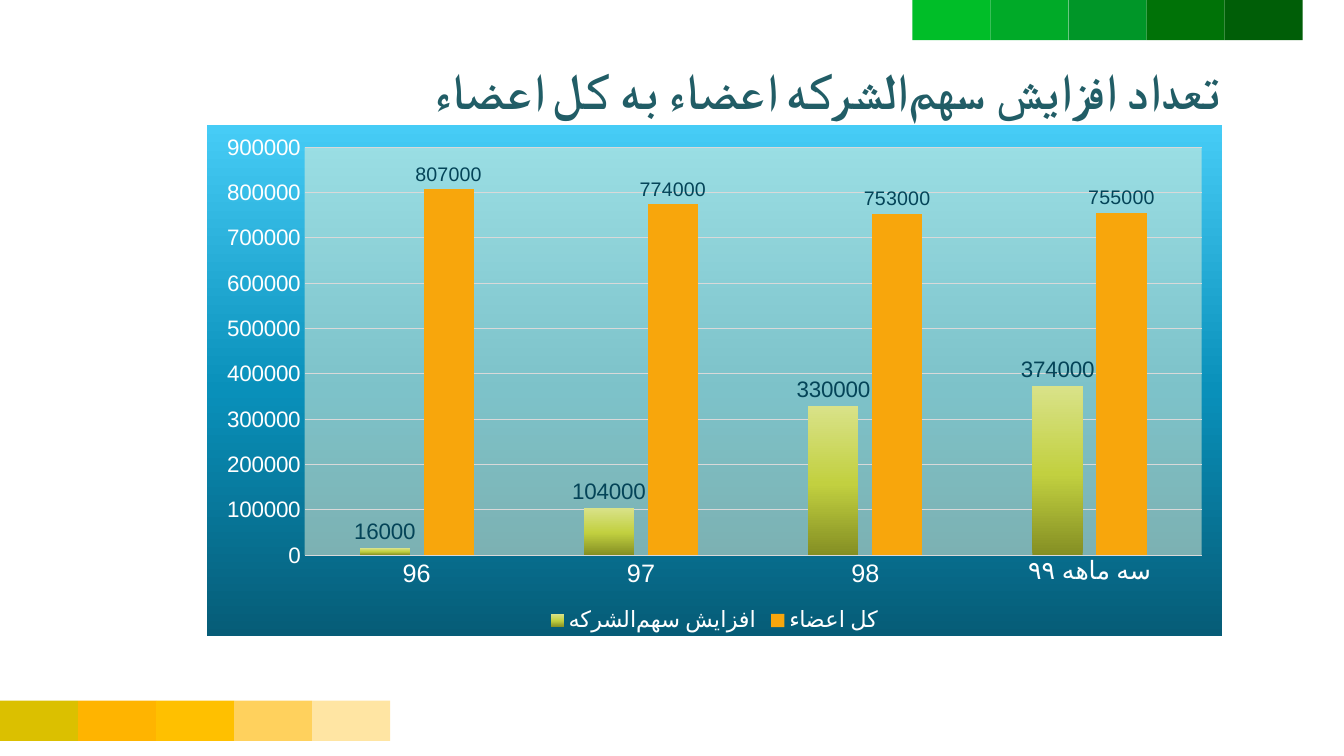
from dataclasses import dataclass

from lxml.etree import SubElement
from pptx import Presentation
from pptx.chart.data import CategoryChartData
from pptx.dml.color import RGBColor
from pptx.enum.chart import (XL_CHART_TYPE, XL_LABEL_POSITION,
                             XL_LEGEND_POSITION, XL_TICK_MARK)
from pptx.enum.shapes import MSO_SHAPE
from pptx.enum.text import MSO_AUTO_SIZE, PP_ALIGN
from pptx.oxml import parse_xml
from pptx.oxml.ns import nsdecls, qn
from pptx.util import Inches, Pt

HALF_SPACE = chr(0x200C)  # Persian zero-width non-joiner
SHARE_CAPITAL = f"سهم{HALF_SPACE}الشرکه"


@dataclass(frozen=True)
class Theme:
    greens: tuple = ("00BE28", "00AA28", "009628", "007207", "005E07")
    yellows: tuple = ("DBC000", "FFB400", "FFC000", "FFD15D", "FFE5A3")
    title: str = "215D66"
    light: str = "FFFFFF"
    grid: str = "D9D9D9"
    label: str = "044458"
    backdrop: tuple = ((0, "065C77"), (48, "0990BA"), (100, "46CCF6"))
    plot: str = "F2F5D8"
    increase: tuple = ((0, "848F23"), (48, "C2D040"), (100, "D9E289"))
    members: str = "F8A60C"
    body_font: str = "Calibri"
    number_font: str = "Arial"
    title_size: int = 36
    category_size: int = 18
    chart_size: int = 16
    members_size: int = 14
    base_size: int = 10


THEME = Theme()


def style_font(font, size, color, name, bold=False):
    font.size = Pt(size)
    font.name = name
    font.bold = bold
    font.color.rgb = RGBColor.from_string(color)


def gradient_xml(stops):
    """Return a gradient that runs from the bottom to the top."""
    marks = "".join(f'<a:gs pos="{pos * 1000}"><a:srgbClr val="{color}"/></a:gs>'
                    for pos, color in stops)
    return (f'<a:gradFill rotWithShape="1"><a:gsLst>{marks}</a:gsLst>'
            '<a:lin ang="16200000" scaled="0"/></a:gradFill>')


def chart_part_format(fill_xml):
    return parse_xml(f'<c:spPr {nsdecls("c", "a")}>{fill_xml}'
                     '<a:ln><a:noFill/></a:ln></c:spPr>')


def add_rtl_text(slide, text, box, **font_format):
    frame = slide.shapes.add_textbox(*map(Inches, box)).text_frame
    frame.word_wrap = True
    frame.auto_size = MSO_AUTO_SIZE.SHAPE_TO_FIT_TEXT
    paragraph = frame.paragraphs[0]
    paragraph.alignment = PP_ALIGN.RIGHT
    paragraph._p.get_or_add_pPr().set("rtl", "1")
    run = paragraph.add_run()
    run.text = text
    style_font(run.font, **font_format)
    SubElement(run._r.get_or_add_rPr(), qn("a:cs"), typeface=font_format["name"])


def add_color_strip(slide, colors, box):
    left, top, width, height = box
    step = width / len(colors)
    for index, color in enumerate(colors):
        tile = slide.shapes.add_shape(
            MSO_SHAPE.RECTANGLE, Inches(left + index * step), Inches(top),
            Inches(step), Inches(height))
        tile.shadow.inherit = False
        tile.fill.solid()
        tile.fill.fore_color.rgb = RGBColor.from_string(color)
        tile.line.fill.background()


def style_axes(chart):
    years, counts = chart.category_axis, chart.value_axis
    for axis, size in ((years, THEME.category_size), (counts, THEME.chart_size)):
        axis.major_tick_mark = axis.minor_tick_mark = XL_TICK_MARK.NONE
        style_font(axis.tick_labels.font, size, THEME.light, THEME.number_font)
    counts.minimum_scale = 0
    counts.maximum_scale = 900000
    counts.major_unit = 100000
    counts.has_major_gridlines = True
    counts.format.line.fill.background()
    for line in (years.format.line, counts.major_gridlines.format.line):
        line.width = Pt(0.75)
        line.color.rgb = RGBColor.from_string(THEME.grid)


def style_series(series, label_size):
    series.invert_if_negative = False
    labels = series.data_labels
    labels.show_value = True
    labels.position = XL_LABEL_POSITION.OUTSIDE_END
    style_font(labels.font, label_size, THEME.label, THEME.number_font)


def add_members_chart(slide, box):
    data = CategoryChartData()
    data.categories = ["96", "97", "98", "سه ماهه ۹۹"]
    data.add_series(f"افزایش {SHARE_CAPITAL}", (16000, 104000, 330000, 374000))
    data.add_series("کل اعضاء", (807000, 774000, 753000, 755000))
    chart = slide.shapes.add_chart(
        XL_CHART_TYPE.COLUMN_CLUSTERED, *map(Inches, box), data).chart
    style_font(chart.font, THEME.base_size, THEME.light, THEME.body_font)
    chart.has_title = False
    chart.has_legend = True
    chart.legend.position = XL_LEGEND_POSITION.BOTTOM
    chart.legend.include_in_layout = False
    style_font(chart.legend.font, THEME.chart_size, THEME.light, THEME.body_font)
    style_axes(chart)

    columns = chart.plots[0]
    columns.vary_by_categories = False
    columns.gap_width = 219
    columns.overlap = -27
    increase, members = columns.series
    style_series(increase, THEME.chart_size)
    style_series(members, THEME.members_size)
    increase.format.fill.gradient()
    gradient = increase._element.spPr.find(qn("a:gradFill"))
    gradient.getparent().replace(gradient, chart_part_format(
        gradient_xml(THEME.increase))[0])
    members.format.fill.solid()
    members.format.fill.fore_color.rgb = RGBColor.from_string(THEME.members)

    chart_body = chart._chartSpace.find(qn("c:chart"))
    chart_body.addnext(chart_part_format(gradient_xml(THEME.backdrop)))
    chart_body.find(qn("c:plotArea")).append(chart_part_format(
        f'<a:solidFill><a:srgbClr val="{THEME.plot}"><a:alpha val="50000"/>'
        '</a:srgbClr></a:solidFill>'))


def main():
    deck = Presentation()
    deck.slide_width, deck.slide_height = Inches(13.33), Inches(7.5)
    slide = deck.slides.add_slide(deck.slide_layouts[6])
    add_color_strip(slide, THEME.greens, (9.05, 0, 3.87, 0.4))
    add_color_strip(slide, THEME.yellows, (0, 6.95, 3.87, 0.4))
    add_rtl_text(slide, f"تعداد افزایش {SHARE_CAPITAL} اعضاء به کل اعضاء",
                 (2.05, 0.54, 10.16, 0.71), size=THEME.title_size,
                 color=THEME.title, name=THEME.body_font, bold=True)
    add_members_chart(slide, (2.05, 1.24, 10.07, 5.07))
    deck.save("out.pptx")


if __name__ == "__main__":
    main()
